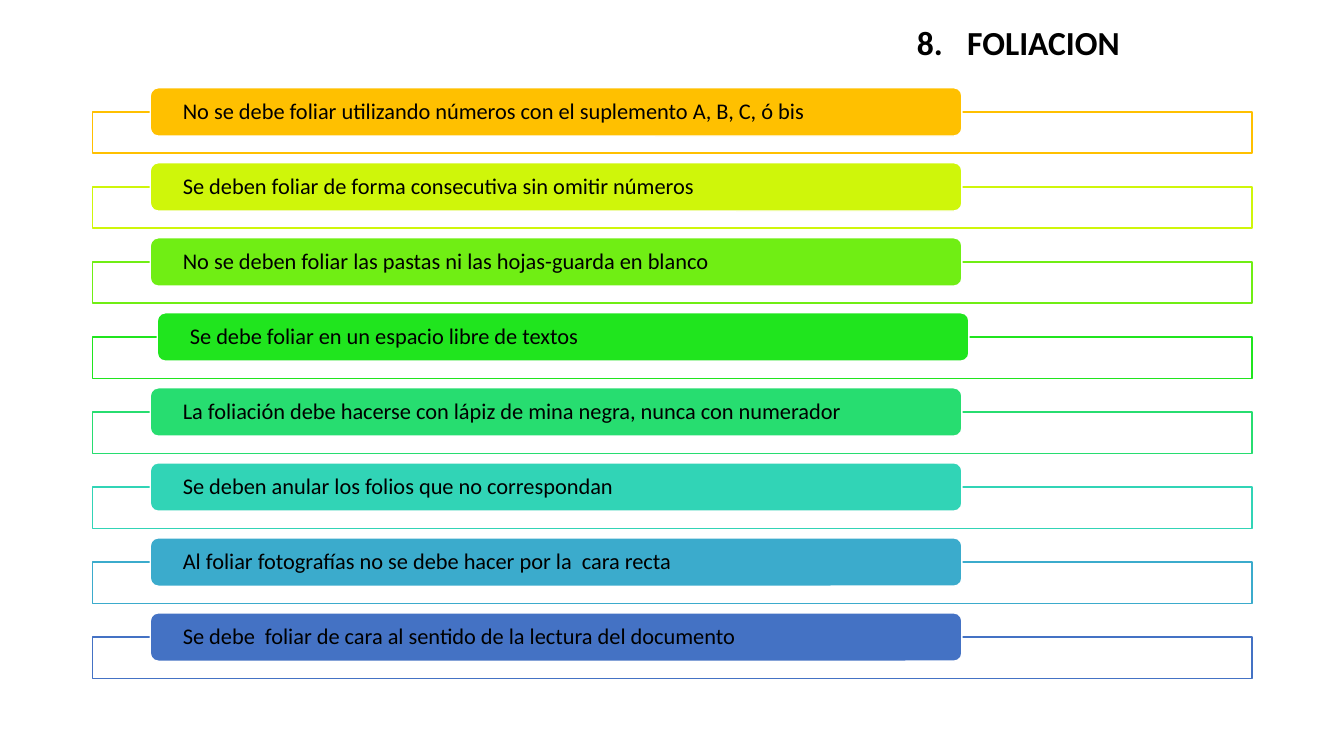
from dataclasses import dataclass
from lxml import etree
from pptx import Presentation
from pptx.dml.color import RGBColor
from pptx.enum.shapes import MSO_SHAPE
from pptx.enum.text import MSO_ANCHOR, MSO_AUTO_SIZE, PP_ALIGN
from pptx.oxml.ns import qn
from pptx.util import Inches, Pt

RECTANGLE, ROUNDED = MSO_SHAPE.RECTANGLE, MSO_SHAPE.ROUNDED_RECTANGLE
MIDDLE, NO_FIT = MSO_ANCHOR.MIDDLE, MSO_AUTO_SIZE.NONE
LEFT, CENTER = PP_ALIGN.LEFT, PP_ALIGN.CENTER


@dataclass(frozen=True)
class Theme:
    font: str = "Calibri"
    title_size: int = 24
    rule_size: int = 16
    ink: str = "000000"
    paper: str = "FFFFFF"
    rules: tuple = ("FFC000", "CFF60A", "70EE14", "20E51E",
                    "27DD70", "31D4B6", "3BABCC", "4472C4")


theme = Theme()


def write(shape, text, size, bold, alignment, side_margin):
    frame = shape.text_frame
    frame_format = {"word_wrap": True, "auto_size": NO_FIT, "vertical_anchor": MIDDLE,
                    "margin_left": Inches(side_margin), "margin_right": Inches(side_margin),
                    "margin_top": 0, "margin_bottom": 0}
    for name, value in frame_format.items():
        setattr(frame, name, value)
    paragraph = frame.paragraphs[0]
    paragraph.text = text
    paragraph.alignment = alignment
    paragraph.line_spacing = 0.9
    font_format = {"name": theme.font, "size": Pt(size), "bold": bold}
    for name, value in font_format.items():
        setattr(paragraph.font, name, value)
    paragraph.font.color.rgb = RGBColor.from_string(theme.ink)


def add_box(slide, kind, left, top, width, height, fill, line):
    shape = slide.shapes.add_shape(kind, Inches(left), Inches(top), Inches(width), Inches(height))
    shape.shadow.inherit = False
    shape.fill.solid()
    shape.fill.fore_color.rgb = RGBColor.from_string(fill)
    shape.line.color.rgb = RGBColor.from_string(line)
    shape.line.width = Pt(1)
    return shape


presentation = Presentation()
presentation.slide_width = Inches(13.33)
presentation.slide_height = Inches(7.5)
slide = presentation.slides.add_slide(presentation.slide_layouts[5])

title = slide.shapes.title
title_place = {"left": 7.51, "top": 0.21, "width": 5.18, "height": 0.46}
for name, value in title_place.items():
    setattr(title, name, Inches(value))
write(title, "8.\tFOLIACION", theme.title_size, True, CENTER, 0.1)

rules = [
    "No se debe foliar utilizando números con el suplemento A, B, C, ó bis",
    "Se deben foliar de forma consecutiva sin omitir números",
    "No se deben foliar las pastas ni las hojas-guarda en blanco",
    "Se debe foliar en un espacio libre de textos",
    "La foliación debe hacerse con lápiz de mina negra, nunca con numerador",
    "Se deben anular los folios que no correspondan",
    "Al foliar fotografías no se debe hacer por la  cara recta",
    "Se debe  foliar de cara al sentido de la lectura del documento",
]
first_top, last_top = 0.87, 6.08
row_pitch = (last_top - first_top) / (len(rules) - 1)
shifted_row = 3

for row, (rule, color) in enumerate(zip(rules, theme.rules)):
    top = first_top + row * row_pitch
    frame_box = add_box(slide, RECTANGLE, 0.92, top + 0.24, 11.5, 0.41, theme.paper, color)
    fill_color = frame_box.fill._xPr.find(qn("a:solidFill"))[0]
    etree.SubElement(fill_color, qn("a:alpha"), val="90000")
    label_left = 1.56 if row == shifted_row else 1.49
    label = add_box(slide, ROUNDED, label_left, top, 8.05, 0.48, color, theme.paper)
    write(label, rule, theme.rule_size, False, LEFT, 0.3)

presentation.save("out.pptx")
